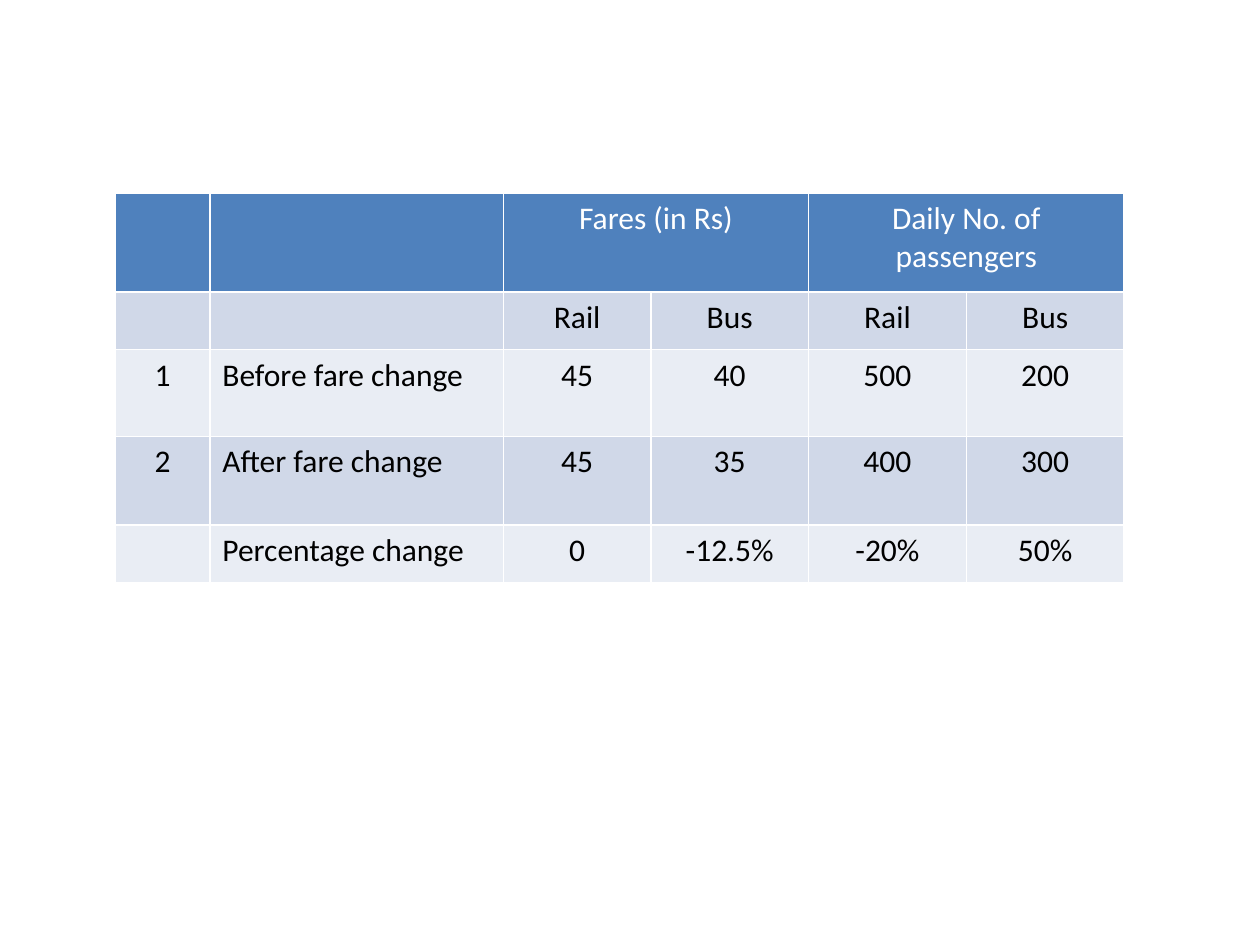
import pptx
import pptx.dml.color
import pptx.enum.text
import pptx.util

Cm = pptx.util.Cm
RGBColor = pptx.dml.color.RGBColor
ALIGN = pptx.enum.text.PP_ALIGN

HEADER_BLUE = RGBColor(0x4F, 0x81, 0xBD)
BAND_DARK = RGBColor(0xD0, 0xD8, 0xE8)
BAND_LIGHT = RGBColor(0xE9, 0xED, 0xF4)
WHITE = RGBColor(0xFF, 0xFF, 0xFF)
BLACK = RGBColor(0x00, 0x00, 0x00)

COLUMN_WIDTHS = [1.9, 5.92, 2.97, 3.18, 3.18, 3.18]
ROW_HEIGHTS = [2.0, 1.16, 1.75, 1.78, 1.16]
LABEL_COLUMN = 1
FARE_ROWS = [
    ["", "", "Fares (in Rs)", "", "Daily No. of passengers", ""],
    ["", "", "Rail", "Bus", "Rail", "Bus"],
    ["1", "Before fare change", "45", "40", "500", "200"],
    ["2", "After fare change", "45", "35", "400", "300"],
    ["", "Percentage change", "0", "-12.5%", "-20%", "50%"],
]

presentation = pptx.Presentation()
presentation.slide_width = Cm(25.4)
presentation.slide_height = Cm(19.05)
slide = presentation.slides.add_slide(presentation.slide_layouts[6])

table = slide.shapes.add_table(
    len(ROW_HEIGHTS), len(COLUMN_WIDTHS), Cm(2.33), Cm(3.89),
    Cm(sum(COLUMN_WIDTHS)), Cm(sum(ROW_HEIGHTS)),
).table
for column, width in zip(table.columns, COLUMN_WIDTHS):
    column.width = Cm(width)
for row, height in zip(table.rows, ROW_HEIGHTS):
    row.height = Cm(height)

for first_column in (2, 4):
    table.cell(0, first_column).merge(table.cell(0, first_column + 1))

for row_index, texts in enumerate(FARE_ROWS):
    if row_index == 0:
        fill_color, text_color = HEADER_BLUE, WHITE
    else:
        fill_color = BAND_DARK if row_index % 2 else BAND_LIGHT
        text_color = BLACK
    for column_index, text in enumerate(texts):
        cell = table.cell(row_index, column_index)
        cell.fill.solid()
        cell.fill.fore_color.rgb = fill_color
        cell.text = text
        paragraph = cell.text_frame.paragraphs[0]
        paragraph.alignment = ALIGN.LEFT if column_index == LABEL_COLUMN else ALIGN.CENTER
        paragraph.font.name = "Calibri"
        paragraph.font.size = pptx.util.Pt(18)
        paragraph.font.bold = False
        paragraph.font.color.rgb = text_color

presentation.save("out.pptx")
